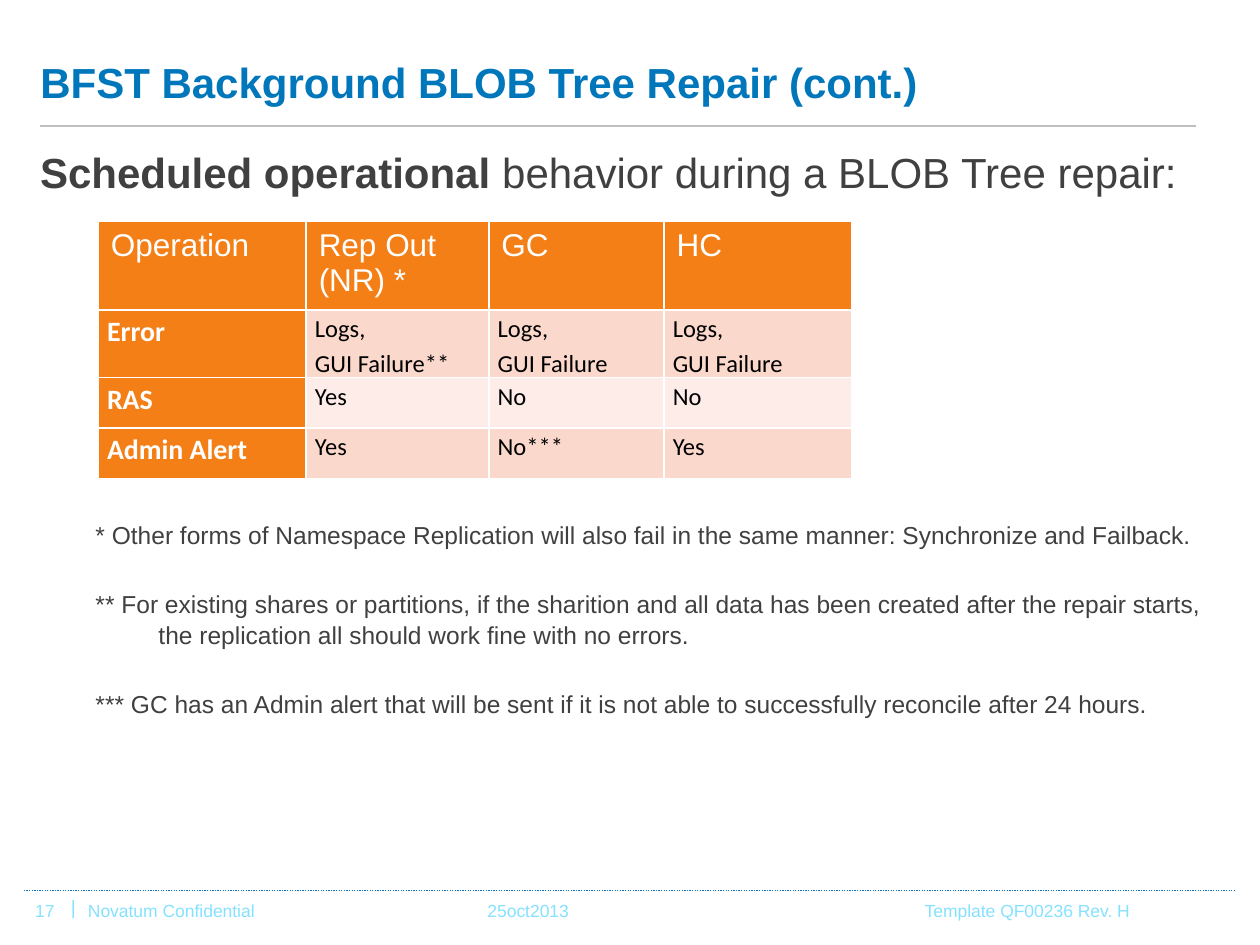
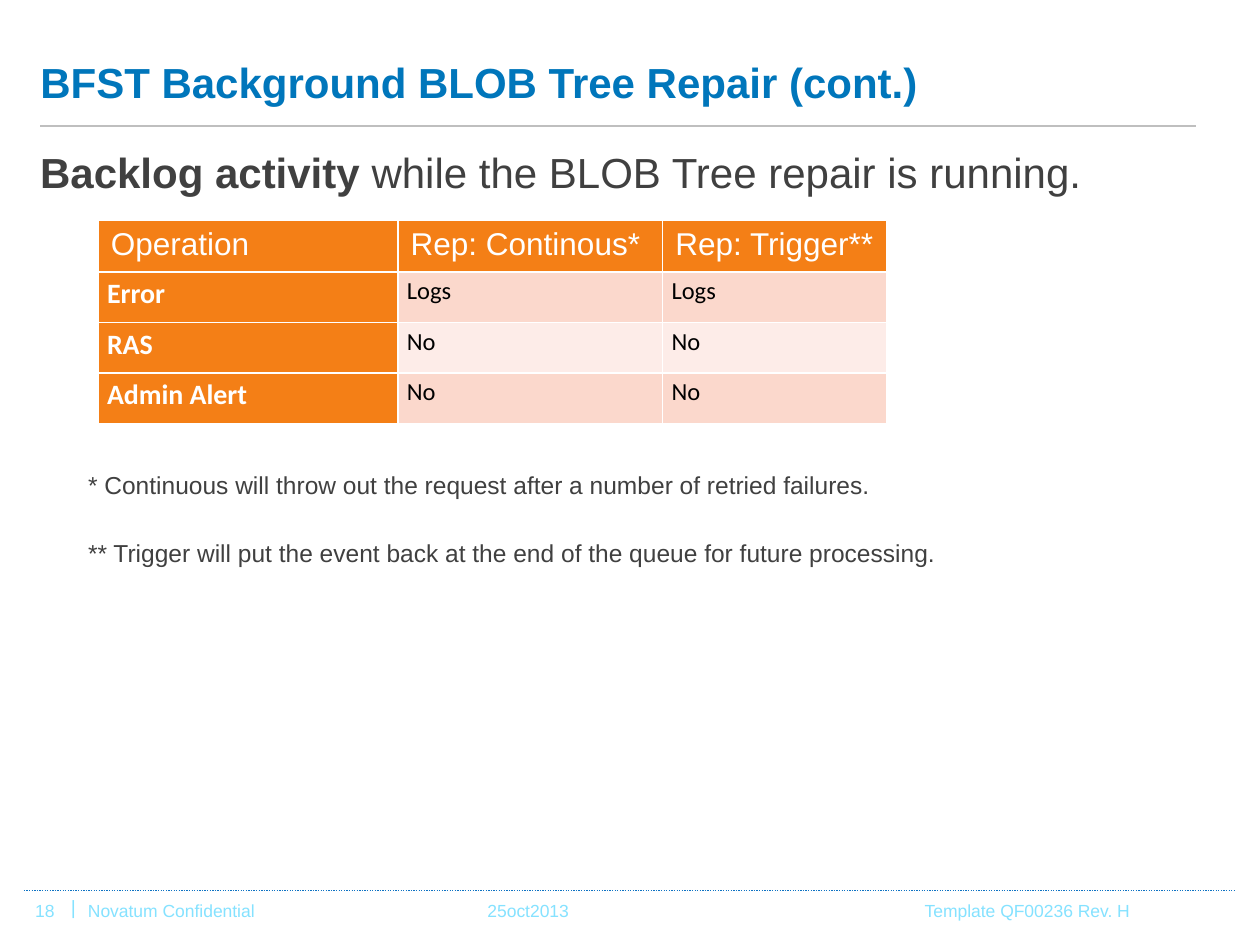
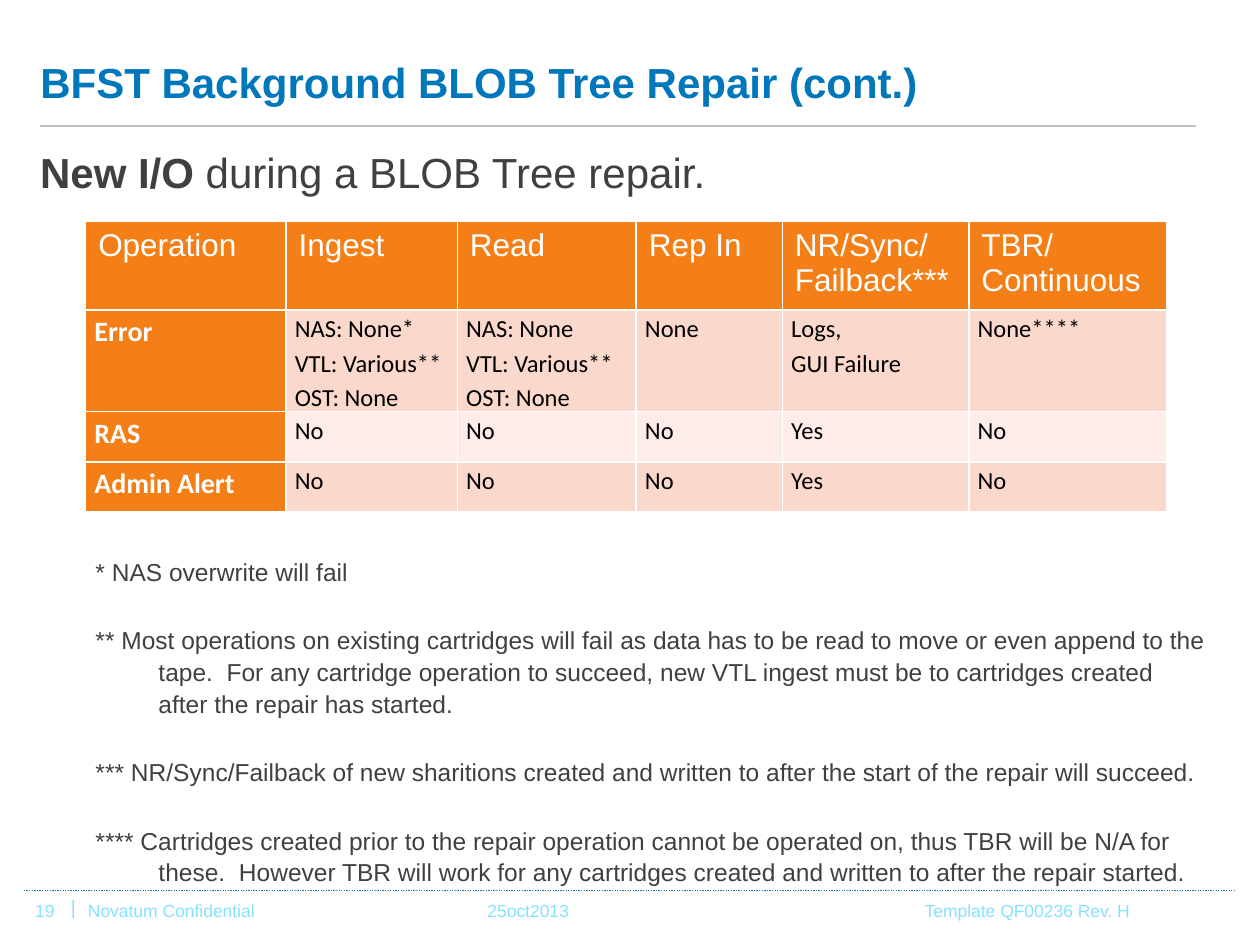
from dataclasses import dataclass

from lxml import etree
from pptx import Presentation
from pptx.dml.color import RGBColor
from pptx.enum.dml import MSO_LINE
from pptx.enum.shapes import MSO_CONNECTOR
from pptx.enum.text import MSO_ANCHOR, MSO_AUTO_SIZE, PP_ALIGN
from pptx.oxml.ns import qn
from pptx.util import Emu, Inches, Pt

LEFT = PP_ALIGN.LEFT
TOP, MIDDLE = MSO_ANCHOR.TOP, MSO_ANCHOR.MIDDLE
NO_AUTOFIT = MSO_AUTO_SIZE.NONE
STRAIGHT = MSO_CONNECTOR.STRAIGHT
SOLID, DOTTED = MSO_LINE.SOLID, MSO_LINE.ROUND_DOT

# Grid: 100 columns by 75 rows of square units
SLIDE_WIDTH, SLIDE_HEIGHT = Inches(10), Inches(7.5)
GRID_COLUMNS = 100
TITLE_ONLY = 5
FIRST_PAGE = 17

# Colours and fonts
WHITE = RGBColor(0xFF, 0xFF, 0xFF)
BLACK = RGBColor(0x00, 0x00, 0x00)
TITLE_BLUE = RGBColor(0x00, 0x76, 0xBB)
TEXT_GRAY = RGBColor(0x40, 0x40, 0x40)
RULE_GRAY = RGBColor(0xBF, 0xBF, 0xBF)
FOOTER_RULE_BLUE = RGBColor(0x0F, 0x73, 0xC3)
FOOTER_CYAN = RGBColor(0x85, 0xE2, 0xFF)
ORANGE = RGBColor(0xF4, 0x7F, 0x16)
BANDS = (RGBColor(0xFB, 0xD8, 0xCC), RGBColor(0xFD, 0xEC, 0xE8))
ARIAL, CALIBRI = "Arial", "Calibri"

BODY_SPACING = 1.08
TABLE_SPACING = 1.15
REMARK_GAP = Pt(21)
REMARKS_RIGHT, REMARKS_BOTTOM = 96.9, 70
HEADER_HEIGHT, ROW_HEIGHT = 4.1, 4


@dataclass(frozen=True)
class Box:
    left: float
    top: float
    width: float
    height: float


@dataclass(frozen=True)
class Style:
    size: float
    color: RGBColor
    font: str = ARIAL
    bold: bool = False


@dataclass(frozen=True)
class Rule:
    left: float
    right: float
    top: float
    color: RGBColor
    dash: MSO_LINE


@dataclass(frozen=True)
class FooterItem:
    text: str
    box: Box
    size: float = 10


@dataclass(frozen=True)
class RepairSlide:
    lead: str
    rest: str
    table_left: float
    table_top: float
    columns: tuple[float, ...]
    rows: tuple[tuple[str, ...], ...]
    remarks_left: float
    remarks_top: float
    remarks: tuple[str, ...]


# Shared parts
TITLE = "BFST Background BLOB Tree Repair (cont.)"
TITLE_BOX = Box(2.2, 2.8, 94.8, 7)
HEADING_BOX = Box(2.2, 10.8, 94.7, 5)
TITLE_STYLE = Style(24, TITLE_BLUE, bold=True)
LEAD_STYLE = Style(24, TEXT_GRAY, bold=True)
HEADING_STYLE = Style(24, TEXT_GRAY)
REMARK_STYLE = Style(14, TEXT_GRAY)
HEADER_STYLE = Style(18, WHITE)
ROW_LABEL_STYLE = Style(16, WHITE, CALIBRI, True)
VALUE_STYLE = Style(14, BLACK, CALIBRI)
RULES = (
    Rule(1.9, 98.1, 70.7, FOOTER_RULE_BLUE, DOTTED),
    Rule(3.2, 94.9, 10, RULE_GRAY, SOLID),
)
FOOTER = (
    FooterItem("Novatum Confidential", Box(6, 70.9, 20, 2.6)),
    FooterItem("|", Box(4.7, 70.6, 1.9, 2.7), 11),
    FooterItem("25oct2013", Box(37.7, 70.9, 24.5, 2.6)),
    FooterItem("Template QF00236 Rev. H", Box(72.4, 70.9, 24.5, 2.6)),
)
PAGE_BOX = Box(1.8, 70.9, 5.2, 2.7)

# Slide content
SLIDES = (
    RepairSlide(
        "Scheduled operational", " behavior during a BLOB Tree repair:",
        7.8, 17.6, (16.5, 14.5, 13.9, 14.9),
        (
            ("Operation", "Rep Out (NR) *", "GC", "HC"),
            ("Error", "Logs,\nGUI Failure**", "Logs,\nGUI Failure", "Logs,\nGUI Failure"),
            ("RAS", "Yes", "No", "No"),
            ("Admin Alert", "Yes", "No***", "Yes"),
        ),
        6.6, 40.6,
        (
            "* Other forms of Namespace Replication will also fail in the same manner: "
            "Synchronize and Failback.",
            "** For existing shares or partitions, if the sharition and all data has been "
            "created after the repair starts, the replication all should work fine with "
            "no errors.",
            "*** GC has an Admin alert that will be sent if it is not able to successfully "
            "reconcile after 24 hours.",
        ),
    ),
    RepairSlide(
        "Backlog activity", " while the BLOB Tree repair is running.",
        7.8, 17.5, (23.8, 21, 17.8),
        (
            ("Operation", "Rep: Continous*", "Rep: Trigger**"),
            ("Error", "Logs", "Logs"),
            ("RAS", "No", "No"),
            ("Admin Alert", "No", "No"),
        ),
        6, 36.6,
        (
            "* Continuous will throw out the request after a number of retried failures.",
            "** Trigger will put the event back at the end of the queue for future processing.",
        ),
    ),
    RepairSlide(
        "New I/O", " during a BLOB Tree repair.",
        6.8, 17.6, (15.9, 13.6, 14.2, 11.6, 14.8, 15.7),
        (
            ("Operation", "Ingest", "Read", "Rep In", "NR/Sync/\nFailback***",
             "TBR/\nContinuous"),
            ("Error", "NAS: None*\nVTL: Various**\nOST: None",
             "NAS: None\nVTL: Various**\nOST: None", "None", "Logs,\nGUI Failure",
             "None****"),
            ("RAS", "No", "No", "No", "Yes", "No"),
            ("Admin Alert", "No", "No", "No", "Yes", "No"),
        ),
        6.6, 43.5,
        (
            "* NAS overwrite will fail",
            "** Most operations on existing cartridges will fail as data has to be read to "
            "move or even append to the tape.  For any cartridge operation to succeed, new "
            "VTL ingest must be to cartridges created after the repair has started.",
            "*** NR/Sync/Failback of new sharitions created and written to after the start "
            "of the repair will succeed.",
            "**** Cartridges created prior to the repair operation cannot be operated on, "
            "thus TBR will be N/A for these.  However TBR will work for any cartridges "
            "created and written to after the repair started.",
        ),
    ),
)


def grid(units: float) -> Emu:
    return Emu(round(SLIDE_WIDTH / GRID_COLUMNS * units))


def place(box: Box) -> tuple[Emu, Emu, Emu, Emu]:
    return grid(box.left), grid(box.top), grid(box.width), grid(box.height)


def format_font(font, style: Style) -> None:
    font.name = style.font
    font.size = Pt(style.size)
    font.bold = style.bold
    font.color.rgb = style.color


def format_text(text_frame, style: Style, spacing: float = 1.0) -> None:
    for paragraph in text_frame.paragraphs:
        paragraph.alignment = LEFT
        paragraph.line_spacing = spacing
        for run in paragraph.runs:
            format_font(run.font, style)


def add_text(slide, box: Box, text: str, style: Style, spacing: float = 1.0):
    text_frame = slide.shapes.add_textbox(*place(box)).text_frame
    text_frame.word_wrap = True
    text_frame.text = text
    format_text(text_frame, style, spacing)
    return text_frame


def add_rule(slide, rule: Rule) -> None:
    top = grid(rule.top)
    connector = slide.shapes.add_connector(
        STRAIGHT, grid(rule.left), top, grid(rule.right), top)
    connector.line.color.rgb = rule.color
    connector.line.width = Pt(0.75)
    connector.line.dash_style = rule.dash
    etree.SubElement(connector._element.spPr, qn("a:effectLst"))


def add_frame(slide, page: int) -> None:
    """Title, rules and footer."""
    for rule in RULES:
        add_rule(slide, rule)
    for item in (FooterItem(str(page), PAGE_BOX), *FOOTER):
        add_text(slide, item.box, item.text, Style(item.size, FOOTER_CYAN))
    title = slide.shapes.title
    title.left, title.top, title.width, title.height = place(TITLE_BOX)
    text_frame = title.text_frame
    text_frame.text = TITLE
    text_frame.auto_size = NO_AUTOFIT
    text_frame.vertical_anchor = MIDDLE
    format_text(text_frame, TITLE_STYLE, BODY_SPACING)


def add_heading(slide, lead: str, rest: str) -> None:
    text_frame = add_text(slide, HEADING_BOX, lead, LEAD_STYLE, BODY_SPACING)
    run = text_frame.paragraphs[0].add_run()
    run.text = rest
    format_font(run.font, HEADING_STYLE)


def add_borders(cell) -> None:
    properties = cell._tc.get_or_add_tcPr()
    for side in ("a:lnL", "a:lnR", "a:lnT", "a:lnB"):
        line = etree.SubElement(properties, qn(side), w=str(Pt(1)))
        fill = etree.SubElement(line, qn("a:solidFill"))
        etree.SubElement(fill, qn("a:srgbClr"), val=str(WHITE))


def fill_cell(cell, text: str, row: int, column: int) -> None:
    is_header = row == 0
    is_value = not is_header and column > 0
    add_borders(cell)
    cell.fill.solid()
    cell.fill.fore_color.rgb = BANDS[(row - 1) % 2] if is_value else ORANGE
    cell.vertical_anchor = TOP
    cell.margin_left = cell.margin_right = grid(1 if is_header else 0.7)
    cell.margin_top = cell.margin_bottom = grid(0.5 if is_header else 0)
    cell.text = text
    if is_header:
        format_text(cell.text_frame, HEADER_STYLE)
    else:
        style = VALUE_STYLE if is_value else ROW_LABEL_STYLE
        format_text(cell.text_frame, style, TABLE_SPACING)


def add_operations_table(slide, content: RepairSlide) -> None:
    heights = (HEADER_HEIGHT, *[ROW_HEIGHT] * (len(content.rows) - 1))
    box = Box(content.table_left, content.table_top, sum(content.columns), sum(heights))
    table = slide.shapes.add_table(
        len(heights), len(content.columns), *place(box)).table
    for column, width in zip(table.columns, content.columns):
        column.width = grid(width)
    for row, height in zip(table.rows, heights):
        row.height = grid(height)
    for row_index, texts in enumerate(content.rows):
        for column_index, text in enumerate(texts):
            cell = table.cell(row_index, column_index)
            fill_cell(cell, text, row_index, column_index)


def add_remarks(slide, content: RepairSlide) -> None:
    left, top = content.remarks_left, content.remarks_top
    box = Box(left, top, REMARKS_RIGHT - left, REMARKS_BOTTOM - top)
    text = "\n".join(content.remarks)
    text_frame = add_text(slide, box, text, REMARK_STYLE, BODY_SPACING)
    hanging = grid(5)
    for index, paragraph in enumerate(text_frame.paragraphs):
        properties = paragraph._p.get_or_add_pPr()
        properties.set("marL", str(hanging))
        properties.set("indent", str(-hanging))
        if index:
            paragraph.space_before = REMARK_GAP


def main() -> None:
    presentation = Presentation()
    presentation.slide_width, presentation.slide_height = SLIDE_WIDTH, SLIDE_HEIGHT
    layout = presentation.slide_layouts[TITLE_ONLY]
    for page, content in enumerate(SLIDES, start=FIRST_PAGE):
        slide = presentation.slides.add_slide(layout)
        add_frame(slide, page)
        add_heading(slide, content.lead, content.rest)
        add_operations_table(slide, content)
        add_remarks(slide, content)
    presentation.save("out.pptx")


if __name__ == "__main__":
    main()
